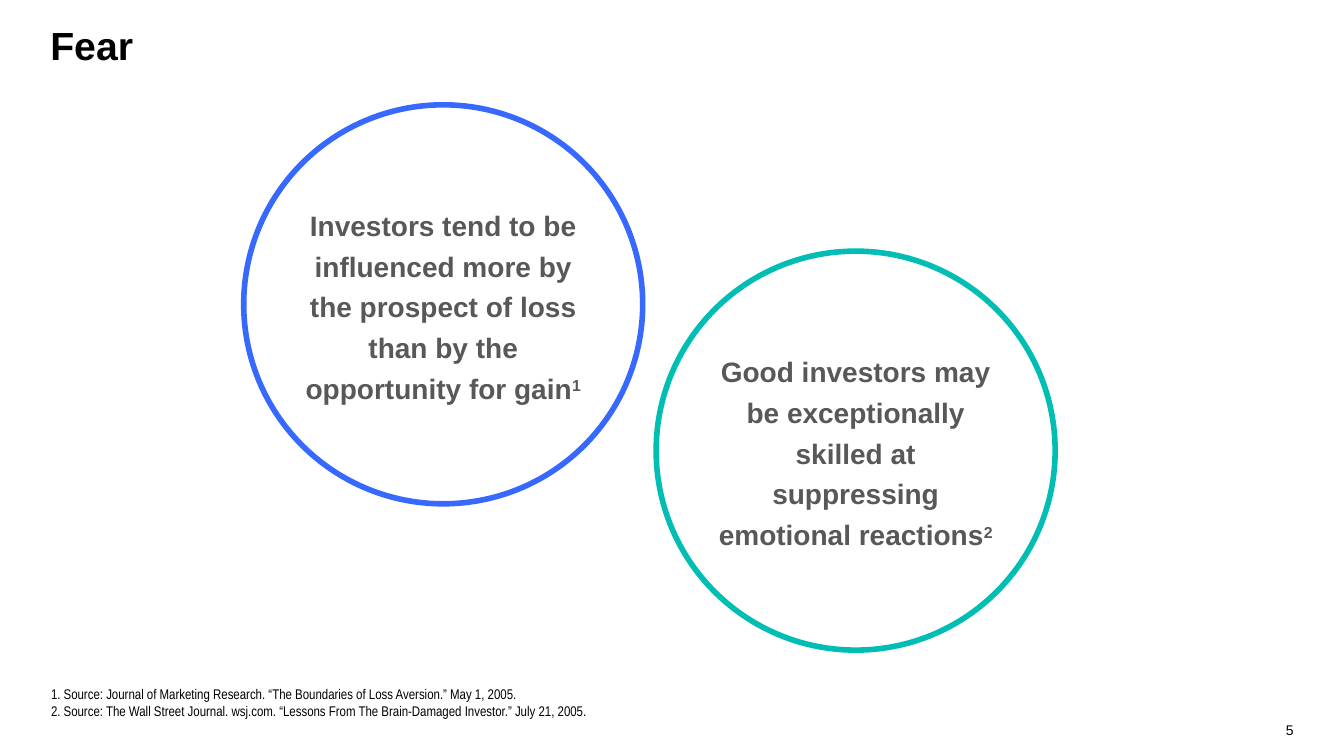
"""Build the slide on fear: two statements in circles, with numbered sources."""
import lxml.etree
import pptx
import pptx.dml.color
import pptx.enum.shapes
import pptx.enum.text
import pptx.oxml.ns
import pptx.util

Pt = pptx.util.Pt

TITLE = "Fear"
SLIDE_NUMBER = "5"
STATEMENTS = [
    {"text": "Investors tend to be influenced more by the prospect of loss than by the opportunity for gain",
     "note": "1", "center": (316.6, 217.4), "color": "blue"},
    {"text": "Good investors may be exceptionally skilled at suppressing emotional reactions",
     "note": "2", "center": (611.2, 321.9), "color": "teal"},
]
SOURCES = [
    "Source: Journal of Marketing Research. “The Boundaries of Loss Aversion.” May 1, 2005.",
    "Source: The Wall Street Journal. wsj.com. “Lessons From The Brain-Damaged Investor.” July 21, 2005.",
]
THEME = {
    "font": "Arial", "narrow": "Arial Narrow",
    "black": "000000", "gray": "585858", "blue": "3769FF", "teal": "00BEB3",
    "title": 28, "statement": 20, "note": 19.5, "small": 10,
}
DIAMETER = 285
STATEMENT_W, STATEMENT_H = 203, 147
STATEMENT_DY = -2


def add_box(s, left, top, width, height, inset=2):
    tf = s.shapes.add_textbox(Pt(left), Pt(top), Pt(width), Pt(height)).text_frame
    tf.word_wrap = True
    tf.margin_left = tf.margin_right = tf.margin_bottom = 0
    tf.margin_top = Pt(inset)
    return tf


def add_run(p, text, size, color="black", font="font", bold=False):
    r = p.add_run()
    r.text = text
    r.font.name = THEME[font]
    r.font.size = Pt(THEME[size])
    r.font.bold = bold
    r.font.color.rgb = pptx.dml.color.RGBColor.from_string(THEME[color])
    return r


def number_paragraph(p):
    pPr = p._p.get_or_add_pPr()
    pPr.set("marL", str(Pt(10)))
    pPr.set("indent", str(Pt(-9)))
    bullet = lxml.etree.SubElement(pPr, pptx.oxml.ns.qn("a:buAutoNum"))
    bullet.set("type", "arabicPeriod")


def add_statement(s, text, note, center, color):
    x, y = center
    circle = s.shapes.add_shape(
        pptx.enum.shapes.MSO_SHAPE.OVAL,
        Pt(x - DIAMETER / 2), Pt(y - DIAMETER / 2), Pt(DIAMETER), Pt(DIAMETER))
    circle.shadow.inherit = False
    circle.fill.background()
    circle.line.color.rgb = pptx.dml.color.RGBColor.from_string(THEME[color])
    circle.line.width = Pt(4)

    tf = add_box(s, x - STATEMENT_W / 2, y - STATEMENT_H / 2 + STATEMENT_DY, STATEMENT_W, STATEMENT_H)
    p = tf.paragraphs[0]
    p.alignment = pptx.enum.text.PP_ALIGN.CENTER
    p.line_spacing = 1.21
    add_run(p, text, "statement", "gray", bold=True)
    r = add_run(p, note, "note", "gray", bold=True)
    r.font._element.set("baseline", "26000")


def main():
    prs = pptx.Presentation()
    prs.slide_width, prs.slide_height = Pt(960), Pt(540)
    s = prs.slides.add_slide(prs.slide_layouts[6])

    title = add_box(s, 36, 13, 684, 60)
    add_run(title.paragraphs[0], TITLE, "title", bold=True)

    for statement in STATEMENTS:
        add_statement(s, **statement)

    sources = add_box(s, 35.5, 487.5, 384.5, 26)
    for i, source in enumerate(SOURCES):
        p = sources.add_paragraph() if i else sources.paragraphs[0]
        number_paragraph(p)
        add_run(p, source, "small", font="narrow")

    number = add_box(s, 918.5, 515.5, 10, 13, inset=0)
    add_run(number.paragraphs[0], SLIDE_NUMBER, "small")

    prs.save("out.pptx")


if __name__ == "__main__":
    main()
